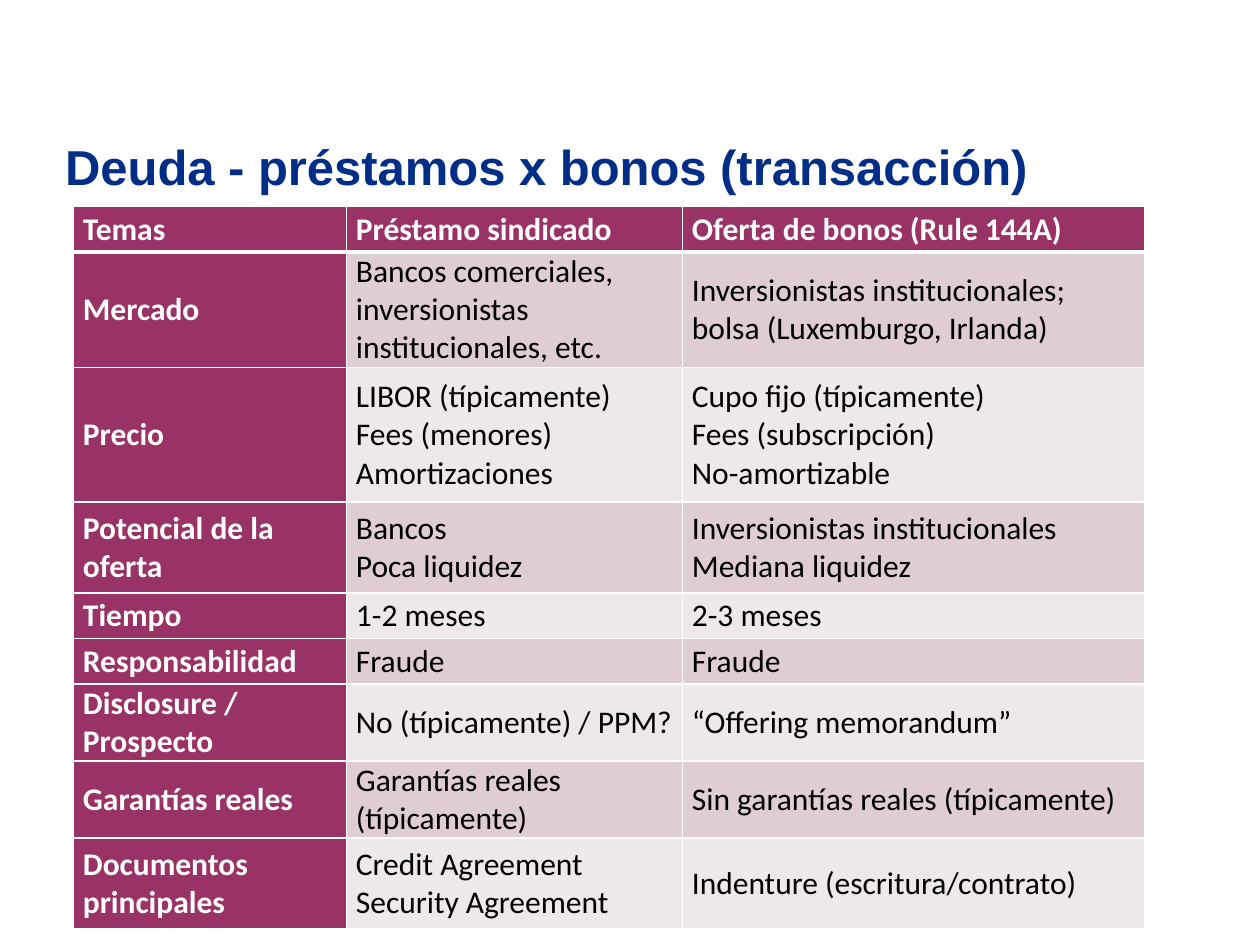
import pptx
import pptx.dml.color
import pptx.enum.text
import pptx.oxml
import pptx.oxml.ns
import pptx.util
from typing import NamedTuple

Pt = pptx.util.Pt
MID = pptx.enum.text.MSO_ANCHOR.MIDDLE
LEFT = pptx.enum.text.PP_ALIGN.LEFT
WHITE, BLACK, NAVY, PLUM = "FFFFFF", "000000", "002D86", "993366"
BANDS = ("EFE8EA", "DECED3")
COLS = (156, 192, 264)


class Row(NamedTuple):
    high: float
    topic: str
    loan: str
    bond: str


class Look(NamedTuple):
    face: str
    size: float
    hue: str
    bold: bool


ROWS = (
    Row(26, "Temas", "Préstamo sindicado", "Oferta de bonos (Rule 144A)"),
    Row(64, "Mercado", "Bancos comerciales, inversionistas institucionales, etc.",
        "Inversionistas institucionales; bolsa (Luxemburgo, Irlanda)"),
    Row(77, "Precio", "LIBOR (típicamente)\nFees (menores)\nAmortizaciones",
        "Cupo fijo (típicamente)\nFees (subscripción)\nNo-amortizable"),
    Row(52, "Potencial de la oferta", "Bancos\nPoca liquidez",
        "Inversionistas institucionales\nMediana liquidez"),
    Row(26, "Tiempo", "1-2 meses", "2-3 meses"),
    Row(26, "Responsabilidad", "Fraude", "Fraude"),
    Row(42.5, "Disclosure / Prospecto", "No (típicamente) / PPM?",
        "“Offering memorandum”"),
    Row(42.5, "Garantías reales", "Garantías reales (típicamente)",
        "Sin garantías reales (típicamente)"),
    Row(52, "Documentos principales", "Credit Agreement\nSecurity Agreement",
        "Indenture (escritura/contrato)"),
)


def tint(hue: str) -> pptx.dml.color.RGBColor:
    return pptx.dml.color.RGBColor.from_string(hue)


def style(frame, look: Look) -> None:
    for para in frame.paragraphs:
        para.alignment = LEFT
        for run in para.runs:
            font = run.font
            font.name = look.face
            font.size = Pt(look.size)
            font.bold = look.bold
            font.color.rgb = tint(look.hue)


def edge(cell, side: str, width: float) -> None:
    cell._tc.get_or_add_tcPr().append(pptx.oxml.parse_xml(
        f'<a:ln{side} {pptx.oxml.ns.nsdecls("a")} w="{Pt(width)}">'
        f'<a:solidFill><a:srgbClr val="{WHITE}"/></a:solidFill></a:ln{side}>'))


def draw_cell(cell, text: str, row: int, col: int) -> None:
    head = row == 0 or col == 0
    cell.text_frame.text = text
    style(cell.text_frame, Look("Calibri", 18, WHITE if head else BLACK, head))
    cell.vertical_anchor = MID
    cell.margin_left = cell.margin_right = Pt(5.4)
    cell.margin_top = cell.margin_bottom = 0
    edge(cell, "L", 1)
    edge(cell, "R", 1)
    edge(cell, "T", 3 if row == 1 else 1)
    edge(cell, "B", 3 if row == 0 else 1)
    cell.fill.solid()
    cell.fill.fore_color.rgb = tint(PLUM if head else BANDS[row % 2])


def draw_title(slide, text: str) -> None:
    title = slide.shapes.title
    title.left, title.top = Pt(30), Pt(72)
    title.width, title.height = Pt(690), Pt(78)
    frame = title.text_frame
    frame.text = text
    frame.word_wrap = True
    frame.vertical_anchor = MID
    frame.margin_bottom = Pt(36)
    style(frame, Look("Arial", 28, NAVY, True))


def draw_table(slide) -> None:
    high = sum(row.high for row in ROWS)
    table = slide.shapes.add_table(
        len(ROWS), len(COLS), Pt(42), Pt(118), Pt(sum(COLS)), Pt(high)).table
    for col, width in enumerate(COLS):
        table.columns[col].width = Pt(width)
    for num, row in enumerate(ROWS):
        table.rows[num].height = Pt(row.high)
        for col, text in enumerate((row.topic, row.loan, row.bond)):
            draw_cell(table.cell(num, col), text, num, col)


def main() -> None:
    deck = pptx.Presentation()
    deck.slide_width, deck.slide_height = Pt(720), Pt(540)
    slide = deck.slides.add_slide(deck.slide_layouts[5])
    draw_title(slide, "Deuda - préstamos x bonos (transacción)")
    draw_table(slide)
    deck.save("out.pptx")


if __name__ == "__main__":
    main()
